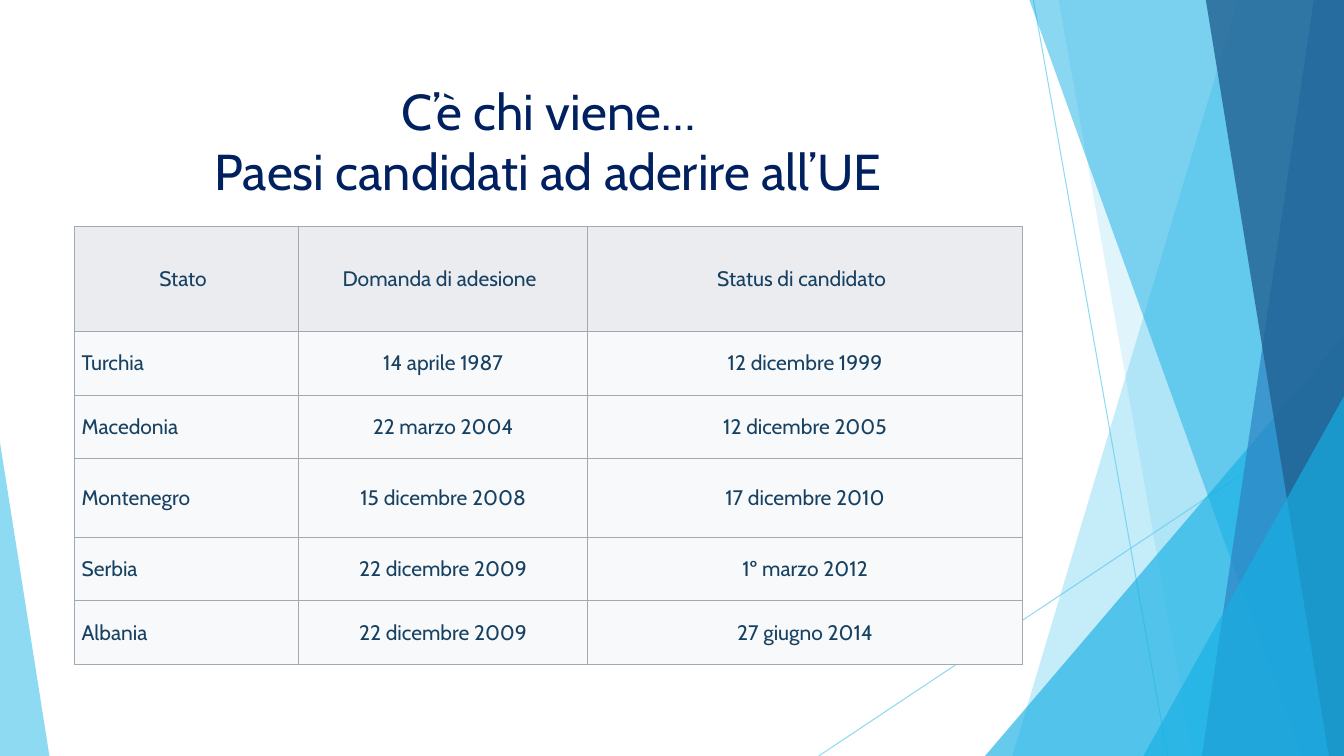
"""Build a slide listing the countries that are candidates to join the EU."""
from dataclasses import dataclass

from lxml.etree import SubElement
from pptx import Presentation
from pptx.dml.color import RGBColor
from pptx.enum.shapes import MSO_CONNECTOR, MSO_SHAPE
from pptx.enum.text import MSO_ANCHOR, PP_ALIGN
from pptx.oxml.ns import qn
from pptx.oxml.xmlchemy import OxmlElement
from pptx.util import Inches, Pt

WIDTH, HEIGHT = 13.33, 7.5
FONT = "Cabin"
SKY, CYAN, BLUE, NAVY = "5FCBEF", "17B0E4", "2E83C3", "226292"
TITLE_INK, TABLE_INK, BORDER = "002060", "174162", "A2A9B1"
HEADER_FILL, BODY_FILL = "EAECF0", "F8F9FA"


@dataclass
class Ray:
    start: tuple[float, float]
    end: tuple[float, float]


@dataclass
class Band:
    top_x: float
    bottom_x: float
    color: str
    opacity: int


@dataclass
class Wedge:
    left: float
    top: float
    width: float
    apex: float
    color: str
    opacity: int


RAYS = [Ray((10.25, 0), (11.58, HEIGHT)), Ray((WIDTH, 4.03), (8.12, HEIGHT))]
BACKDROP = [
    Band(12.28, 10.04, SKY, 36),
    Band(10.5, 11.83, SKY, 20),
    Wedge(9.77, 3.33, 3.56, 1, CYAN, 66),
    Band(10.21, 12.91, CYAN, 50),
    Band(13.03, 11.92, BLUE, 70),
    Band(11.96, 13.18, NAVY, 80),
    Wedge(11.34, 3.93, 1.99, 1, CYAN, 66),
    Wedge(0, 4.39, 0.49, 0, SKY, 70),
]
TITLE_LINES = ["C’è chi viene…", "Paesi candidati ad aderire all’UE"]
COLUMN_WIDTHS = [2.22, 2.87, 4.31]
ROW_HEIGHTS = [1.04, 0.63, 0.63, 0.78, 0.63, 0.63]
CANDIDATES = [
    ("Stato", "Domanda di adesione", "Status di candidato"),
    ("Turchia", "14 aprile 1987", "12 dicembre 1999"),
    ("Macedonia", "22 marzo 2004", "12 dicembre 2005"),
    ("Montenegro", "15 dicembre 2008", "17 dicembre 2010"),
    ("Serbia", "22 dicembre 2009", "1º marzo 2012"),
    ("Albania", "22 dicembre 2009", "27 giugno 2014"),
]


def rgb(color: str) -> RGBColor:
    return RGBColor.from_string(color)


def set_opacity(properties, percent: int) -> None:
    for tint in properties.iter(qn("a:srgbClr")):
        SubElement(tint, qn("a:alpha")).set("val", str(percent * 1000))


def paint(shape, color: str, opacity: int) -> None:
    shape.shadow.inherit = False
    shape.line.fill.background()
    shape.fill.solid()
    shape.fill.fore_color.rgb = rgb(color)
    set_opacity(shape._element.spPr, opacity)


def draw_ray(slide, ray: Ray) -> None:
    ends = [Inches(value) for value in ray.start + ray.end]
    connector = slide.shapes.add_connector(MSO_CONNECTOR.STRAIGHT, *ends)
    connector.line.color.rgb = rgb(SKY)
    connector.line.width = Pt(0.75)
    properties = connector._element.spPr
    set_opacity(properties, 70)
    SubElement(properties, qn("a:effectLst"))


def draw_band(slide, band: Band) -> None:
    corners = [(WIDTH, 0), (WIDTH, HEIGHT), (band.bottom_x, HEIGHT)]
    outline = slide.shapes.build_freeform(Inches(band.top_x), 0)
    outline.add_line_segments([(Inches(x), Inches(y)) for x, y in corners], close=True)
    paint(outline.convert_to_shape(), band.color, band.opacity)


def draw_wedge(slide, wedge: Wedge) -> None:
    triangle = slide.shapes.add_shape(
        MSO_SHAPE.ISOSCELES_TRIANGLE, Inches(wedge.left), Inches(wedge.top),
        Inches(wedge.width), Inches(HEIGHT - wedge.top))
    triangle.adjustments[0] = wedge.apex
    paint(triangle, wedge.color, wedge.opacity)


def add_run(paragraph, text: str, size: float, color: str) -> None:
    run = paragraph.add_run()
    run.text = text
    run.font.name = FONT
    run.font.size = Pt(size)
    run.font.bold = False
    run.font.color.rgb = rgb(color)


def write_title(slide) -> None:
    title = slide.shapes.title
    title.left, title.top = Inches(0.74), Inches(0.67)
    title.width, title.height = Inches(9.4), Inches(1.44)
    title.text_frame.vertical_anchor = MSO_ANCHOR.MIDDLE
    heading = title.text_frame.paragraphs[0]
    heading.alignment = PP_ALIGN.CENTER
    for index, line in enumerate(TITLE_LINES):
        if index:
            heading.add_line_break()
        add_run(heading, line, 36, TITLE_INK)


def add_borders(cell) -> None:
    properties = cell._tc.get_or_add_tcPr()
    for index, side in enumerate(("a:lnL", "a:lnR", "a:lnT", "a:lnB")):
        edge = OxmlElement(side)
        edge.set("w", str(Pt(0.75)))
        ink = SubElement(SubElement(edge, qn("a:solidFill")), qn("a:srgbClr"))
        ink.set("val", BORDER)
        properties.insert(index, edge)


def fill_cell(cell, text: str, is_header: bool, is_country: bool) -> None:
    cell.vertical_anchor = MSO_ANCHOR.MIDDLE
    cell.margin_top = cell.margin_bottom = Inches(0.02)
    cell.margin_left = Inches(0.07 if is_country else 0.02)
    cell.margin_right = Inches(0.09 if is_header else 0.02)
    cell.fill.solid()
    cell.fill.fore_color.rgb = rgb(HEADER_FILL if is_header else BODY_FILL)
    add_borders(cell)
    paragraph = cell.text_frame.paragraphs[0]
    paragraph.alignment = PP_ALIGN.LEFT if is_country else PP_ALIGN.CENTER
    add_run(paragraph, text, 15, TABLE_INK)


def draw_candidates(slide) -> None:
    candidates = slide.shapes.add_table(
        len(ROW_HEIGHTS), len(COLUMN_WIDTHS), Inches(0.74), Inches(2.25),
        Inches(sum(COLUMN_WIDTHS)), Inches(sum(ROW_HEIGHTS))).table
    candidates.first_row = candidates.horz_banding = False
    for column, width in zip(candidates.columns, COLUMN_WIDTHS):
        column.width = Inches(width)
    for row, height in zip(candidates.rows, ROW_HEIGHTS):
        row.height = Inches(height)
    for row_index, entry in enumerate(CANDIDATES):
        for column_index, text in enumerate(entry):
            is_header = row_index == 0
            is_country = column_index == 0 and not is_header
            fill_cell(candidates.cell(row_index, column_index), text, is_header, is_country)


def main() -> None:
    deck = Presentation()
    deck.slide_width, deck.slide_height = Inches(WIDTH), Inches(HEIGHT)
    slide = deck.slides.add_slide(deck.slide_layouts[5])
    for ray in RAYS:
        draw_ray(slide, ray)
    for part in BACKDROP:
        if isinstance(part, Band):
            draw_band(slide, part)
        else:
            draw_wedge(slide, part)
    write_title(slide)
    draw_candidates(slide)
    deck.save("out.pptx")


if __name__ == "__main__":
    main()
